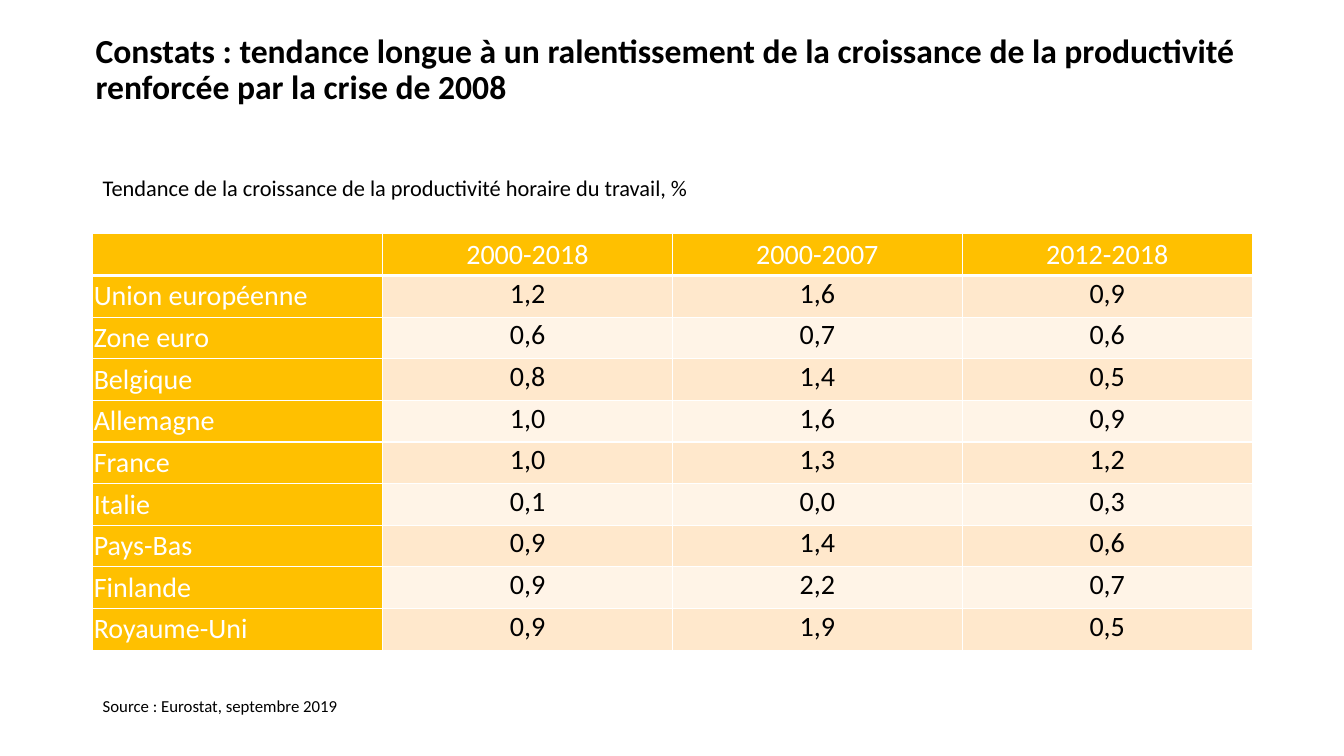
"""Build the slide on the slowdown of hourly labour productivity growth."""
from dataclasses import dataclass

import lxml.etree
import pptx
import pptx.dml.color
import pptx.enum.text
import pptx.oxml.ns
import pptx.util

Inches = pptx.util.Inches
Pt = pptx.util.Pt
Align = pptx.enum.text.PP_ALIGN
Anchor = pptx.enum.text.MSO_ANCHOR


@dataclass(frozen=True)
class Theme:
    font: str = "Calibri"
    ink: str = "000000"
    paper: str = "FFFFFF"
    heading: str = "FFC000"
    bands: tuple[str, str] = ("FFE8CC", "FFF4E7")
    title_size: int = 24
    table_size: int = 20
    subtitle_size: int = 16
    source_size: int = 12
    line: float = 1
    header_line: float = 3


@dataclass(frozen=True)
class Caption:
    text: str
    left: float
    top: float
    width: float
    height: float
    size: int
    bold: bool = False
    anchor: Anchor = Anchor.TOP
    line_spacing: float = 1.0
    space_after: float = 0


@dataclass(frozen=True)
class Trend:
    area: str
    rates: tuple[str, str, str]


THEME = Theme()

CAPTIONS = [
    Caption("Constats : tendance longue à un ralentissement de la croissance de la productivité "
            "renforcée par la crise de 2008", 0.85, 0.23, 11.5, 0.94, THEME.title_size,
            bold=True, anchor=Anchor.MIDDLE, line_spacing=0.9),
    Caption("Source : Eurostat, septembre 2019", 0.92, 6.85, 10.83, 0.3, THEME.source_size,
            space_after=12),
    Caption("Tendance de la croissance de la productivité horaire du travail, %",
            0.92, 1.68, 7.61, 0.37, THEME.subtitle_size),
]

PERIODS = Trend("", ("2000-2018", "2000-2007", "2012-2018"))
TRENDS = [
    Trend("Union européenne", ("1,2", "1,6", "0,9")),
    Trend("Zone euro", ("0,6", "0,7", "0,6")),
    Trend("Belgique", ("0,8", "1,4", "0,5")),
    Trend("Allemagne", ("1,0", "1,6", "0,9")),
    Trend("France", ("1,0", "1,3", "1,2")),
    Trend("Italie", ("0,1", "0,0", "0,3")),
    Trend("Pays-Bas", ("0,9", "1,4", "0,6")),
    Trend("Finlande", ("0,9", "2,2", "0,7")),
    Trend("Royaume-Uni", ("0,9", "1,9", "0,5")),
]


def add_run(paragraph, text: str, size: int, color: str, bold: bool = False) -> None:
    run = paragraph.add_run()
    run.text = text
    run.font.name = THEME.font
    run.font.size = Pt(size)
    run.font.bold = bold
    run.font.color.rgb = pptx.dml.color.RGBColor.from_string(color)


def add_caption(slide, caption: Caption) -> None:
    frame = slide.shapes.add_textbox(
        Inches(caption.left), Inches(caption.top), Inches(caption.width), Inches(caption.height)
    ).text_frame
    frame.word_wrap = True
    frame.vertical_anchor = caption.anchor
    paragraph = frame.paragraphs[0]
    paragraph.line_spacing = caption.line_spacing
    paragraph.space_after = Pt(caption.space_after)
    add_run(paragraph, caption.text, caption.size, THEME.ink, caption.bold)


def add_borders(cell, bottom: float) -> None:
    qn = pptx.oxml.ns.qn
    properties = cell._tc.get_or_add_tcPr()
    for side in ("lnL", "lnR", "lnT", "lnB"):
        width = bottom if side == "lnB" else THEME.line
        line = lxml.etree.SubElement(properties, qn(f"a:{side}"), w=str(Pt(width)))
        fill = lxml.etree.SubElement(line, qn("a:solidFill"))
        lxml.etree.SubElement(fill, qn("a:srgbClr"), val=THEME.paper)


def fill_cell(cell, text: str, row: int, column: int) -> None:
    is_heading = row == 0 or column == 0
    add_borders(cell, THEME.header_line if row == 0 else THEME.line)
    background = THEME.heading if is_heading else THEME.bands[(row - 1) % 2]
    cell.fill.solid()
    cell.fill.fore_color.rgb = pptx.dml.color.RGBColor.from_string(background)
    cell.margin_left = cell.margin_right = Inches(0.01)
    cell.margin_top = cell.margin_bottom = Inches(0.01)
    cell.vertical_anchor = Anchor.MIDDLE if is_heading else Anchor.TOP
    paragraph = cell.text_frame.paragraphs[0]
    paragraph.alignment = Align.LEFT if column == 0 else Align.CENTER
    if text:
        add_run(paragraph, text, THEME.table_size, THEME.paper if is_heading else THEME.ink)


def add_trend_table(slide) -> None:
    rows = [PERIODS, *TRENDS]
    table = slide.shapes.add_table(
        len(rows), 1 + len(PERIODS.rates), Inches(0.92), Inches(2.32), Inches(11.5), Inches(4.13)
    ).table
    for row, trend in enumerate(rows):
        for column, text in enumerate((trend.area, *trend.rates)):
            fill_cell(table.cell(row, column), text, row, column)


def main() -> None:
    deck = pptx.Presentation()
    deck.slide_width = Inches(13.33)
    deck.slide_height = Inches(7.5)
    slide = deck.slides.add_slide(deck.slide_layouts[6])
    for caption in CAPTIONS:
        add_caption(slide, caption)
    add_trend_table(slide)
    deck.save("out.pptx")


if __name__ == "__main__":
    main()
